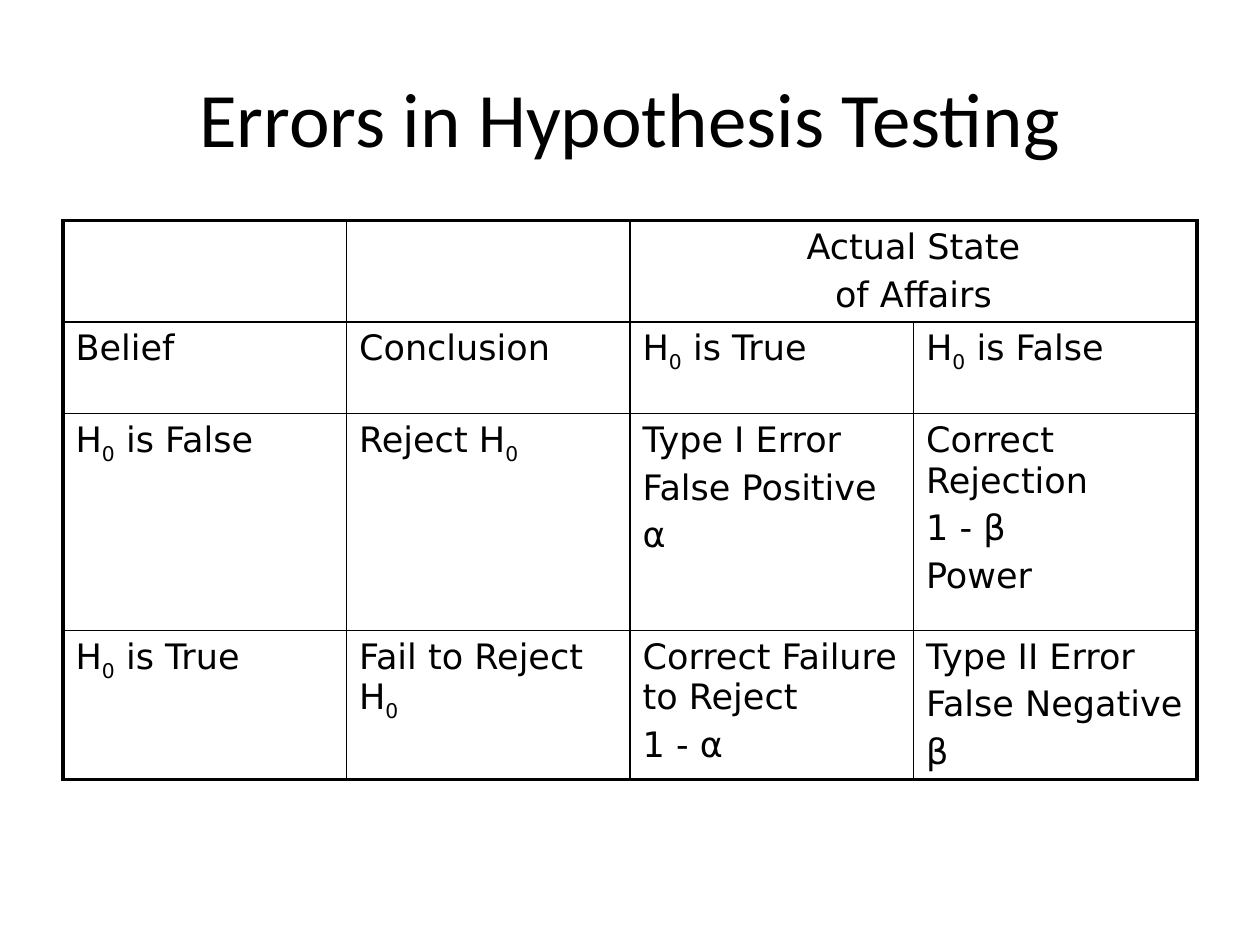
from lxml import etree
from pptx import Presentation
from pptx import util as u
from pptx.dml.color import RGBColor
from pptx.enum import text
from pptx.oxml.ns import qn

COLORS = {"ink": "000000"}
INK = RGBColor.from_string(COLORS["ink"])
THIN, THICK = u.Pt(1), u.Pt(2.25)


def add_run(p, content, font, size, subscript=False):
    r = p.add_run()
    r.text = content
    r.font.name = font
    r.font.size = u.Pt(size)
    r.font.color.rgb = INK
    if subscript:
        r.font._element.set("baseline", "-25000")


def add_border(cell, side, width):
    ln = etree.SubElement(cell._tc.get_or_add_tcPr(), qn(f"a:ln{side}"), w=str(width))
    fill = etree.SubElement(ln, qn("a:solidFill"))
    etree.SubElement(fill, qn("a:srgbClr"), val=COLORS["ink"])


prs = Presentation()
prs.slide_width, prs.slide_height = u.Cm(25.4), u.Cm(19.05)
s = prs.slides.add_slide(prs.slide_layouts[5])

# Title
sp = s.shapes.title
sp.left, sp.top, sp.width, sp.height = u.Cm(1.27), u.Cm(0.76), u.Cm(22.86), u.Cm(3.18)
tf = sp.text_frame
tf.vertical_anchor = text.MSO_ANCHOR.MIDDLE
p = tf.paragraphs[0]
p.alignment = text.PP_ALIGN.CENTER
add_run(p, "Errors in Hypothesis Testing", "Calibri", 44)

# Table contents: one line per paragraph, "_0" marks a subscript zero
rows = [
    ["", "", "Actual State\nof Affairs", ""],
    ["Belief", "Conclusion", "H_0 is True", "H_0 is False"],
    ["H_0 is False", "Reject H_0", "Type I Error\nFalse Positive\nα",
     "Correct Rejection\n1 - β\nPower"],
    ["H_0 is True", "Fail to Reject H_0", "Correct Failure to Reject\n1 - α",
     "Type II Error\nFalse Negative\nβ"],
]
heights = [2.03, 1.85, 4.37, 3.0]
n_rows, n_cols = len(rows), len(rows[0])

# Table grid
table = s.shapes.add_table(n_rows, n_cols, u.Cm(1.27), u.Cm(4.45),
                           u.Cm(22.86), u.Cm(sum(heights))).table
table.first_row = table.horz_banding = False
for row, height in zip(table.rows, heights):
    row.height = u.Cm(height)
table.cell(0, 2).merge(table.cell(0, 3))

# Cells: thick outer frame, thin inner rules
for i, row in enumerate(rows):
    for j, content in enumerate(row):
        cell = table.cell(i, j)
        if cell.is_spanned:
            continue
        span = cell.span_width if cell.is_merge_origin else 1
        outer = {"L": j == 0, "R": j + span == n_cols, "T": i == 0, "B": i == n_rows - 1}
        for side, on_frame in outer.items():
            add_border(cell, side, THICK if on_frame else THIN)
        cell.fill.background()

        tf = cell.text_frame
        for k, line in enumerate(content.split("\n")):
            p = tf.add_paragraph() if k else tf.paragraphs[0]
            p.space_before = u.Pt(4)
            if span > 1:
                p.alignment = text.PP_ALIGN.CENTER
            for m, part in enumerate(line.split("_0")):
                if m:
                    add_run(p, "0", "DejaVu Sans", 20, subscript=True)
                if part:
                    add_run(p, part, "DejaVu Sans", 20)

prs.save("out.pptx")
